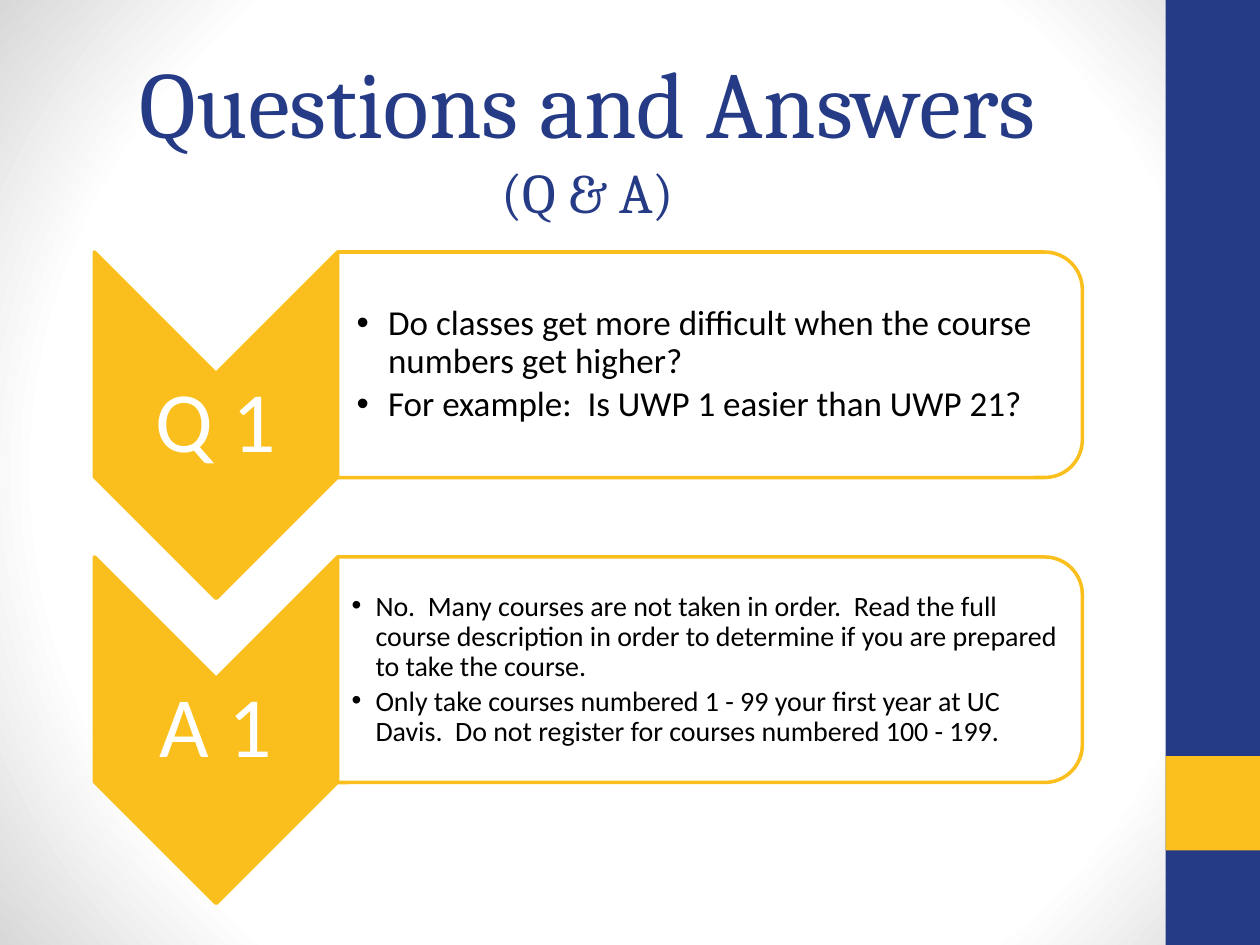
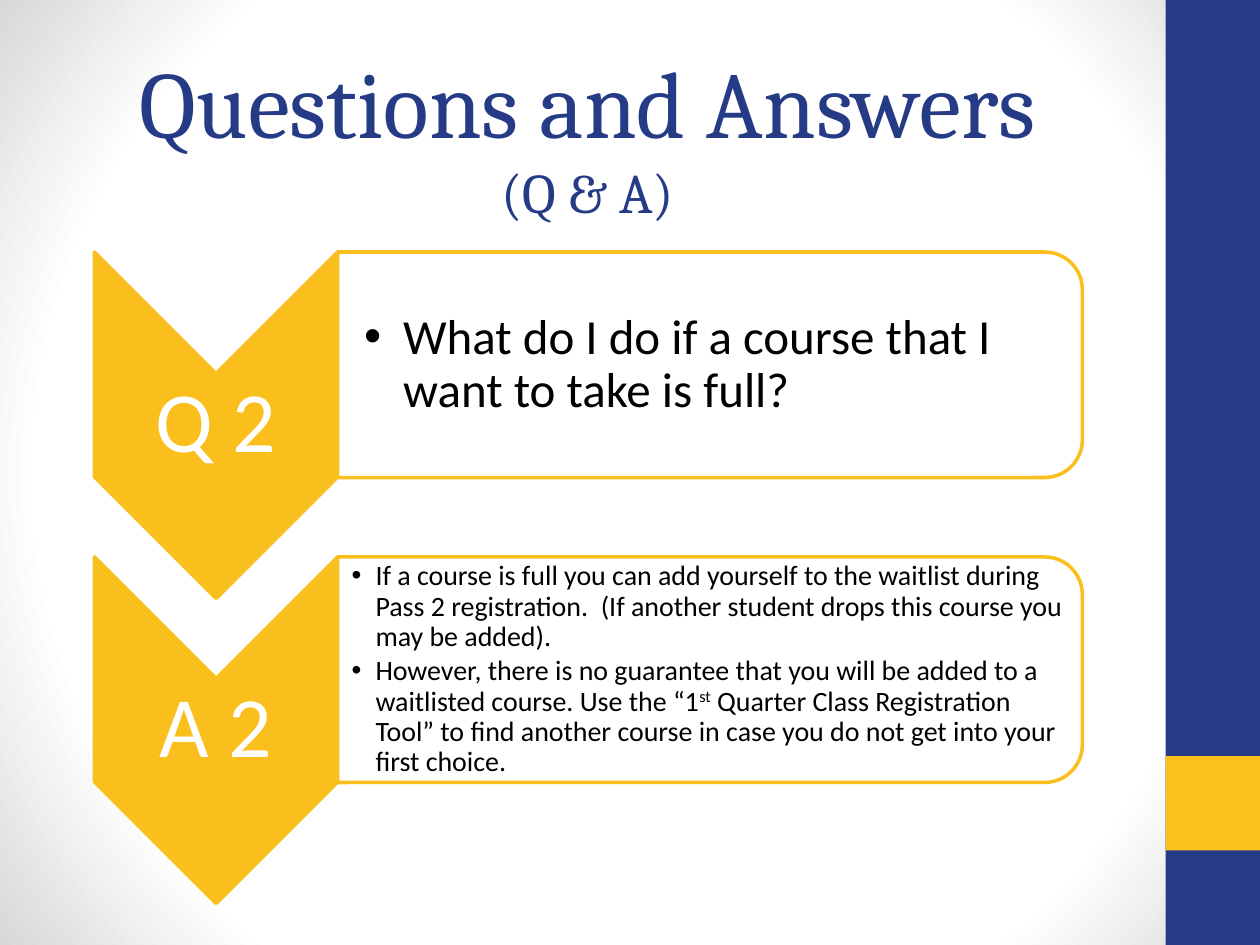
from pptx import Presentation
from pptx.dml.color import RGBColor
from pptx.enum.shapes import MSO_SHAPE
from pptx.enum.text import MSO_ANCHOR, MSO_AUTO_SIZE, PP_ALIGN
from pptx.oxml import parse_xml
from pptx.oxml.ns import nsdecls, qn
from pptx.util import Inches, Pt

BLUE, GOLD, AMBER = "263B86", "FBC01E", "FABF1C"
WHITE, BLACK, GRAY = "FFFFFF", "000000", "D8D8D8"
STEP = 2.42
INDENT = {16: (0.12, 0.19), 20: (0.16, 0.25), 28: (0.22, 0.31)}

PAGES = [
    [
        ("Q 1", 20, [
            "Do classes get more difficult when the course numbers get higher?",
            "For example:  Is UWP 1 easier than UWP 21?",
        ]),
        ("A 1", 16, [
            "No.  Many courses are not taken in order.  Read the full course "
            "description in order to determine if you are prepared to take the course.",
            "Only take courses numbered 1 - 99 your first year at UC Davis.  "
            "Do not register for courses numbered 100 - 199.",
        ]),
    ],
    [
        ("Q 2", 28, ["What do I do if a course that I want to take is full?"]),
        ("A 2", 16, [
            "If a course is full you can add yourself to the waitlist during Pass 2 "
            "registration.  (If another student drops this course you may be added).",
            "However, there is no guarantee that you will be added to a waitlisted "
            "course. Use the “1^st^ Quarter Class Registration Tool” to find another "
            "course in case you do not get into your first choice.",
        ]),
    ],
]


def tint(code):
    return RGBColor.from_string(code)


def write(para, text, size=16, font="Calibri", color=BLACK, align=PP_ALIGN.LEFT,
          space=1.0, before=0, indent=None):
    para.alignment = align
    para.line_spacing = space
    para.space_before = Pt(before)
    if indent:
        props = para._p.get_or_add_pPr()
        props.set("marL", str(Inches(indent)))
        props.set("indent", str(-Inches(indent)))
        for mark in (f'<a:buClr {nsdecls("a")}><a:srgbClr val="{color}"/></a:buClr>',
                     f'<a:buFont {nsdecls("a")} typeface="Arial"/>',
                     f'<a:buChar {nsdecls("a")} char="•"/>'):
            props.append(parse_xml(mark))
    for place, part in enumerate(text.split("^")):
        run = para.add_run()
        run.text = part
        run.font.size = Pt(size)
        run.font.name = font
        run.font.color.rgb = tint(color)
        if place % 2:
            run._r.get_or_add_rPr().set("baseline", "30000")


class Deck:
    def __init__(self):
        self.prs = Presentation()
        self.prs.slide_width, self.prs.slide_height = Inches(10), Inches(7.5)
        self.slide = None
        self.backdrop()

    def backdrop(self):
        master = self.prs.slide_master
        master.background.fill.solid()
        props = master.element.cSld.find(qn("p:bg")).find(qn("p:bgPr"))
        stops = "".join(
            f'<a:gs pos="{pos}000"><a:srgbClr val="{code}"/></a:gs>'
            for pos, code in ((0, WHITE), (75, WHITE), (100, GRAY)))
        props.replace(props[0], parse_xml(
            f'<a:gradFill {nsdecls("a")} rotWithShape="1"><a:gsLst>{stops}</a:gsLst>'
            '<a:path path="circle"><a:fillToRect l="50000" t="50000" r="50000" '
            'b="50000"/></a:path></a:gradFill>'))

    def page(self):
        self.slide = self.prs.slides.add_slide(self.prs.slide_layouts[3])
        self.shape(MSO_SHAPE.RECTANGLE, 9.25, 0, 0.75, 7.5, BLUE)
        self.shape(MSO_SHAPE.RECTANGLE, 9.25, 6, 0.75, 0.75, GOLD)

    def shape(self, kind, left, top, width, height, fill, line=None, turn=0,
              adjust=(), alpha=None):
        item = self.slide.shapes.add_shape(
            kind, Inches(left), Inches(top), Inches(width), Inches(height))
        item.shadow.inherit = False
        item.rotation = turn
        for place, value in enumerate(adjust):
            item.adjustments[place] = value
        item.fill.solid()
        item.fill.fore_color.rgb = tint(fill)
        if alpha:
            color = item.element.spPr.find(qn("a:solidFill"))[0]
            color.append(parse_xml(f'<a:alpha {nsdecls("a")} val="{alpha}000"/>'))
        if line:
            item.line.color.rgb = tint(line)
            item.line.width = Pt(2)
        else:
            item.line.fill.background()

    def frame(self, item, box, inset):
        item.left, item.top, item.width, item.height = map(Inches, box)
        frame = item.text_frame
        frame.word_wrap = True
        frame.auto_size = MSO_AUTO_SIZE.NONE
        frame.vertical_anchor = MSO_ANCHOR.MIDDLE
        (frame.margin_left, frame.margin_top,
         frame.margin_right, frame.margin_bottom) = map(Inches, inset)
        return frame

    def title(self, head, sub):
        frame = self.frame(self.slide.shapes.title, (0.5, 0.3, 8.33, 1.53),
                           (0.1, 0.05, 0.1, 0.05))
        style = dict(font="Cambria", color=BLUE, align=PP_ALIGN.CENTER)
        write(frame.paragraphs[0], head, size=54, **style)
        write(frame.add_paragraph(), sub, size=32, **style)

    def label(self, text, top):
        box = (0.75, top, 1.93, 0.82)
        item = self.slide.shapes.add_textbox(*map(Inches, box))
        frame = self.frame(item, box, [0.03] * 4)
        write(frame.paragraphs[0], text, size=49, color=WHITE,
              align=PP_ALIGN.CENTER, space=0.9)

    def bullets(self, slot, lines, size, top):
        item = self.slide.placeholders[slot]
        self.slide.shapes.element.append(item.element)
        inset, indent = INDENT[size]
        frame = self.frame(item, (2.67, top, 5.82, 1.61), (inset, 0.01, 0.01, 0.01))
        for place, line in enumerate(lines):
            para = frame.add_paragraph() if place else frame.paragraphs[0]
            write(para, line, size=size, space=0.9, indent=indent,
                  before=0.15 * size if place else 0)

    def row(self, place, name, size, lines):
        drop = place * STEP
        self.shape(MSO_SHAPE.CHEVRON, 0.34, 2.41 + drop, 2.75, 1.93, AMBER,
                   line=AMBER, turn=90, adjust=[0.5])
        self.label(name, 2.96 + drop)
        self.shape(MSO_SHAPE.ROUND_2_SAME_RECTANGLE, 4.74, -0.06 + drop, 1.79, 5.91,
                   WHITE, line=AMBER, turn=90, adjust=[0.167, 0], alpha=90)
        self.bullets(place + 1, lines, size, 2.09 + drop)


def main():
    deck = Deck()
    for rows in PAGES:
        deck.page()
        deck.title("Questions and Answers", "(Q & A)")
        for place, row in enumerate(rows):
            deck.row(place, *row)
    deck.prs.save("out.pptx")


if __name__ == "__main__":
    main()
